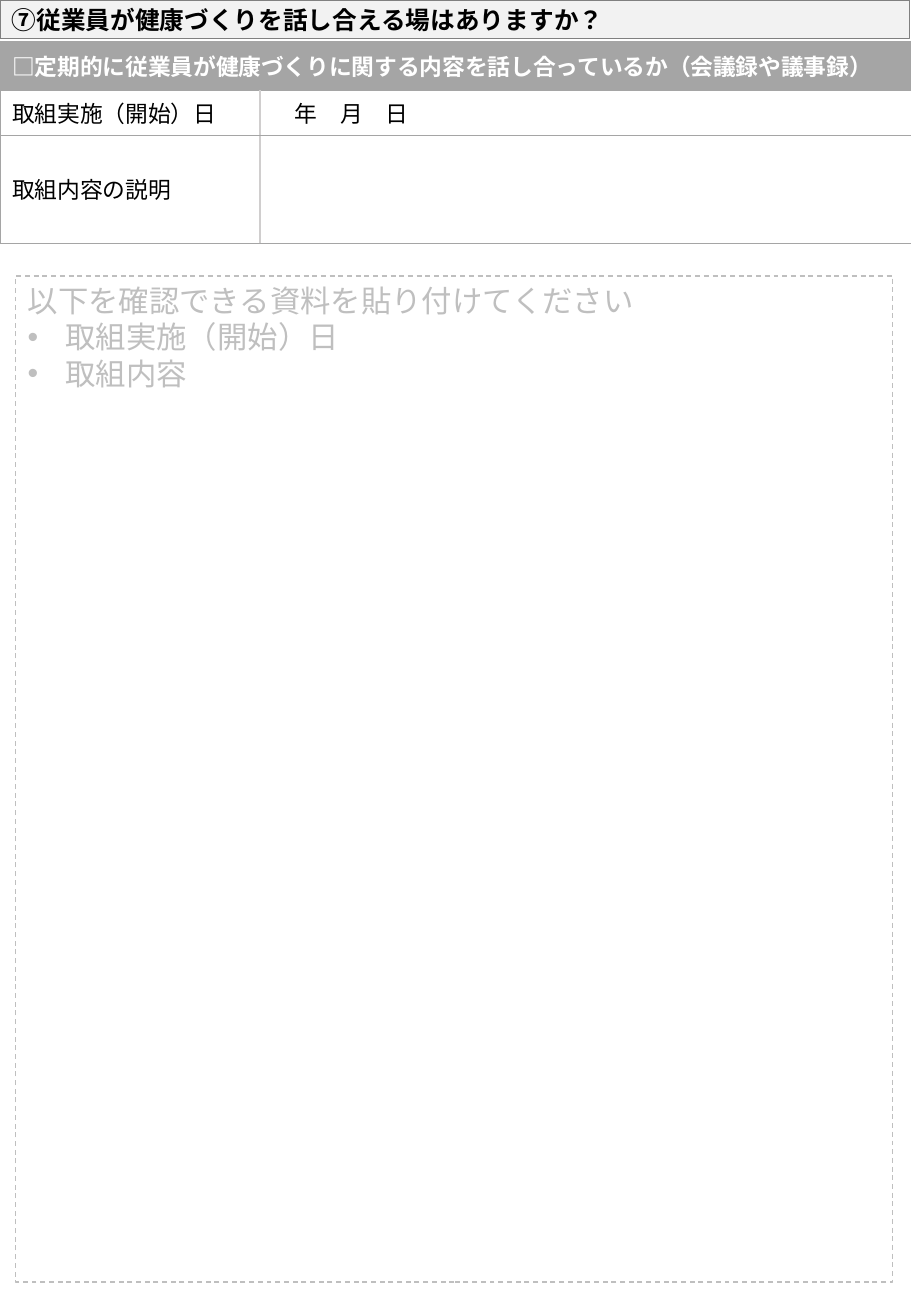
"""Build the workplace health discussion evidence sheet."""
from dataclasses import dataclass

from lxml import etree
from pptx import Presentation
from pptx.dml.color import RGBColor
from pptx.enum.dml import MSO_LINE
from pptx.enum.lang import MSO_LANGUAGE_ID
from pptx.enum.shapes import MSO_SHAPE
from pptx.enum.text import MSO_ANCHOR, PP_ALIGN
from pptx.oxml.ns import qn
from pptx.util import Cm, Pt

RECTANGLE = MSO_SHAPE.RECTANGLE
DASH = MSO_LINE.DASH
JAPANESE = MSO_LANGUAGE_ID.JAPANESE
TOP, MIDDLE = MSO_ANCHOR.TOP, MSO_ANCHOR.MIDDLE
LEFT = PP_ALIGN.LEFT


@dataclass(frozen=True)
class Theme:
    heading_font: str = "Arial"
    body_font: str = "Calibri"
    heading_size: float = 14.6
    table_size: float = 13.5
    evidence_size: float = 18
    ink: str = "000000"
    white: str = "FFFFFF"
    heading_fill: str = "F2F2F2"
    heading_line: str = "808080"
    grid: str = "A5A5A5"
    divider: str = "D0CECE"
    evidence: str = "BFBFBF"


def write(paragraph, text, *, font, size, color, bold=False, bullet=False):
    paragraph.alignment = LEFT
    run = paragraph.add_run()
    run.text = text
    run.font.name, run.font.size, run.font.bold = font, Pt(size), bold
    run.font.color.rgb = RGBColor.from_string(color)
    run.font.language_id = JAPANESE
    if bullet:
        indent = Cm(0.79)
        properties = paragraph._p.get_or_add_pPr()
        properties.set("marL", str(indent))
        properties.set("indent", str(-indent))
        etree.SubElement(properties, qn("a:buFont"), typeface="Arial")
        etree.SubElement(properties, qn("a:buChar"), char="•")


class Sheet:
    def __init__(self, slide, theme):
        self.slide, self.theme = slide, theme

    def box(self, bounds, lines, *, line, width, fill=None, dash=None,
            anchor=TOP, **text_format):
        frame = self.slide.shapes.add_shape(RECTANGLE, *map(Cm, bounds))
        frame.shadow.inherit = False
        if fill:
            frame.fill.solid()
            frame.fill.fore_color.rgb = RGBColor.from_string(fill)
        else:
            frame.fill.background()
        frame.line.color.rgb = RGBColor.from_string(line)
        frame.line.width = Pt(width)
        if dash:
            frame.line.dash_style = dash
        body = frame.text_frame
        body.word_wrap, body.vertical_anchor = True, anchor
        for index, (text, bullet) in enumerate(lines):
            paragraph = body.add_paragraph() if index else body.paragraphs[0]
            write(paragraph, text, bullet=bullet, **text_format)

    def cell(self, cell, text, *, color, fill=None, bold=False, borders):
        cell.vertical_anchor = MIDDLE
        if fill:
            cell.fill.solid()
            cell.fill.fore_color.rgb = RGBColor.from_string(fill)
        else:
            cell.fill.background()
        if text:
            write(cell.text_frame.paragraphs[0], text, color=color, bold=bold,
                  font=self.theme.body_font, size=self.theme.table_size)
        properties = cell._tc.get_or_add_tcPr()
        for index, (side, (shade, width)) in enumerate(zip("LRTB", borders)):
            edge = etree.Element(qn(f"a:ln{side}"), w=str(Pt(width)))
            solid = etree.SubElement(edge, qn("a:solidFill"))
            etree.SubElement(solid, qn("a:srgbClr"), val=shade)
            properties.insert(index, edge)

    def table(self, bounds, widths, heights, heading, entries):
        grid = self.slide.shapes.add_table(
            len(heights), len(widths), *map(Cm, bounds)).table
        grid.first_row = grid.horz_banding = False
        for column, width in zip(grid.columns, widths):
            column.width = Cm(width)
        for row, height in zip(grid.rows, heights):
            row.height = Cm(height)
        outer, divider = (self.theme.grid, 0.5), (self.theme.divider, 1)
        grid.cell(0, 0).merge(grid.cell(0, len(widths) - 1))
        self.cell(grid.cell(0, 0), heading, color=self.theme.white, bold=True,
                  fill=self.theme.grid, borders=[outer] * 4)
        for row, (label, answer) in enumerate(entries, 1):
            self.cell(grid.cell(row, 0), label, color=self.theme.ink,
                      borders=[outer, divider, outer, outer])
            self.cell(grid.cell(row, 1), answer, color=self.theme.ink,
                      borders=[divider, outer, outer, outer])


def main():
    presentation = Presentation()
    presentation.slide_width, presentation.slide_height = Cm(19.05), Cm(27.51)
    theme = Theme()
    slide = presentation.slides.add_slide(presentation.slide_layouts[6])
    sheet = Sheet(slide, theme)
    sheet.box((0, 0, 19.02, 0.81),
              [("⑦従業員が健康づくりを話し合える場はありますか？", False)],
              fill=theme.heading_fill, line=theme.heading_line, width=1,
              anchor=MIDDLE, font=theme.heading_font, size=theme.heading_size,
              color=theme.ink, bold=True)
    sheet.table((0, 0.86, 19.05, 4.09), (5.44, 13.61), (1.02, 0.76, 2.26),
                "□定期的に従業員が健康づくりに関する内容を話し合っているか（会議録や議事録）",
                [("取組実施（開始）日", "　年　月　日"), ("取組内容の説明", "")])
    sheet.box((0.33, 5.77, 18.34, 21.03),
              [("以下を確認できる資料を貼り付けてください", False),
               ("取組実施（開始）日", True), ("取組内容", True)],
              line=theme.evidence, width=0.75, dash=DASH,
              font=theme.body_font, size=theme.evidence_size,
              color=theme.evidence)
    presentation.save("out.pptx")


if __name__ == "__main__":
    main()
